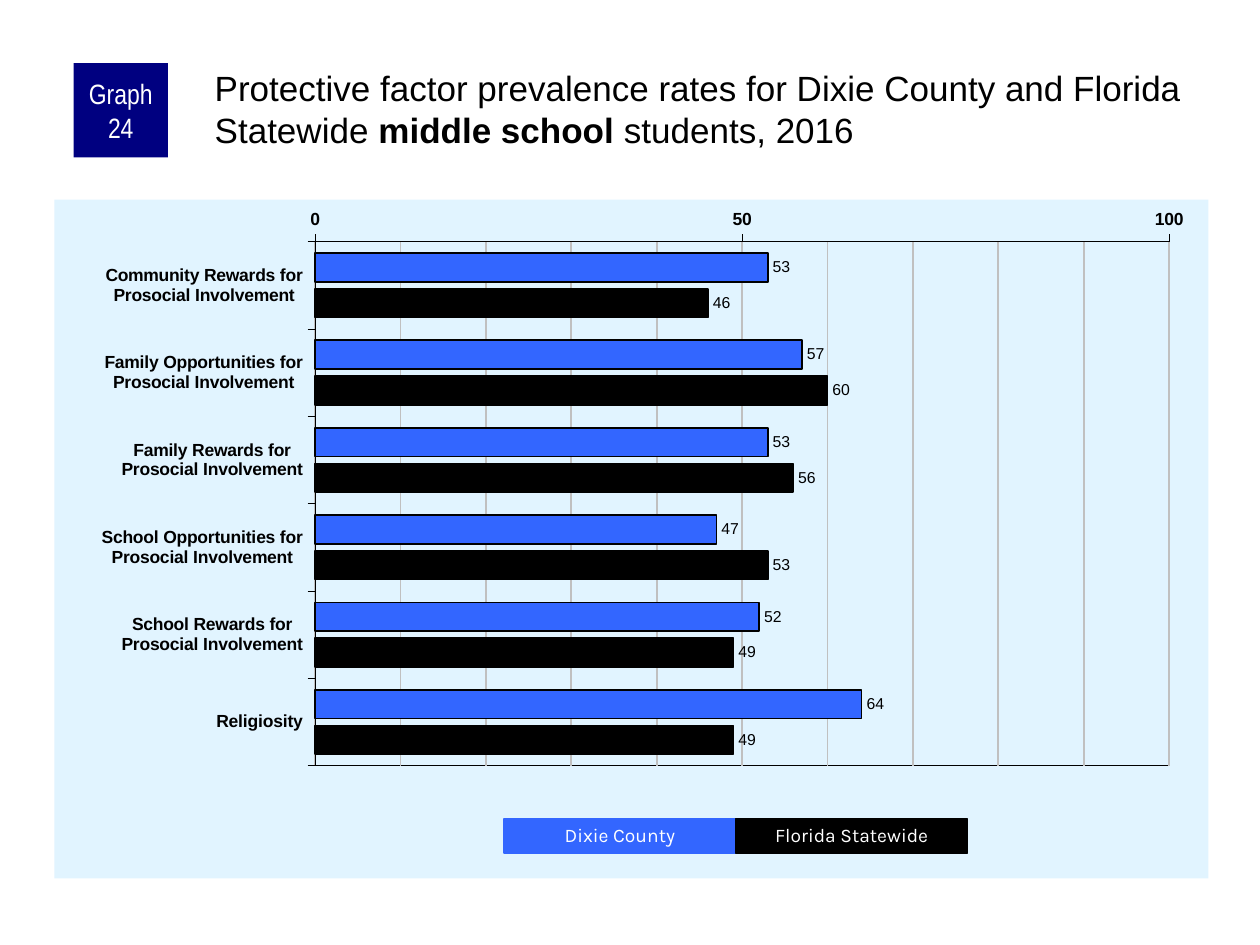
from copy import deepcopy

from lxml import etree
from pptx import Presentation
from pptx.chart.data import CategoryChartData
from pptx.dml.color import RGBColor
from pptx.enum.chart import XL_AXIS_CROSSES as Crosses
from pptx.enum.chart import XL_CHART_TYPE as ChartType
from pptx.enum.chart import XL_LABEL_POSITION as LabelPosition
from pptx.enum.chart import XL_TICK_MARK as TickMark
from pptx.enum.shapes import MSO_SHAPE as Preset
from pptx.enum.text import MSO_ANCHOR as Anchor
from pptx.enum.text import PP_ALIGN as Align
from pptx.oxml import parse_xml
from pptx.oxml.ns import qn
from pptx.util import Pt

COLORS = {
    "panel": "E1F4FF",
    "county": "3366FF",
    "state": "000000",
    "badge": "000080",
    "grid": "C0C0C0",
    "ink": "000000",
    "white": "FFFFFF",
}
CHART_NS = (
    'xmlns:c="http://schemas.openxmlformats.org/drawingml/2006/chart" '
    'xmlns:a="http://schemas.openxmlformats.org/drawingml/2006/main"'
)
CATEGORIES = [
    "Community Rewards for\nProsocial Involvement",
    "Family Opportunities for\nProsocial Involvement",
    "Family Rewards for\nProsocial Involvement",
    "School Opportunities for\nProsocial Involvement",
    "School Rewards for\nProsocial Involvement",
    "Religiosity",
]
GROUPS = [
    ("Dixie County", "county", (53, 57, 53, 47, 52, 64)),
    ("Florida Statewide", "state", (46, 60, 56, 53, 49, 49)),
]
PLOT_AREA = {"x": 0.226, "y": 0.062, "w": 0.74, "h": 0.772}


def color(name):
    return RGBColor.from_string(COLORS[name])


def style_font(font, size, name="Arial", tint="ink", bold=False):
    font.size = Pt(size)
    font.name = name
    font.bold = bold
    font.color.rgb = color(tint)


def style_line(line, tint, width):
    line.color.rgb = color(tint)
    line.width = Pt(width)


def write_text(shape, runs, *, size, font="Arial", tint="ink", align=Align.LEFT,
               anchor=Anchor.TOP, insets=(7.2, 3.6, 7.2, 3.6), spacing=None):
    """Fill a shape with one paragraph of (text, bold) runs."""
    frame = shape.text_frame
    frame.word_wrap = True
    frame.vertical_anchor = anchor
    (frame.margin_left, frame.margin_top,
     frame.margin_right, frame.margin_bottom) = map(Pt, insets)
    paragraph = frame.paragraphs[0]
    paragraph.alignment = align
    if spacing:
        paragraph.line_spacing = spacing
    for text, bold in runs:
        run = paragraph.add_run()
        run.text = text
        style_font(run.font, size, font, tint, bold)


def add_box(slide, box, fill, outline=None):
    shape = slide.shapes.add_shape(Preset.RECTANGLE, *map(Pt, box))
    shape.shadow.inherit = False
    shape.fill.solid()
    shape.fill.fore_color.rgb = color(fill)
    if outline:
        style_line(shape.line, outline, 0.75)
    else:
        shape.line.fill.background()
    return shape


def add_header(slide, left, top, width):
    badge = add_box(slide, (left, top, 54, 54), "badge")
    write_text(badge, [("Graph 24", False)], size=16, font="Arial Narrow", tint="white",
               align=Align.CENTER, anchor=Anchor.MIDDLE, insets=(3.6, 0, 3.6, 0))
    title = slide.shapes.add_textbox(Pt(left + 78.5), Pt(top), Pt(width - 78.5), Pt(60))
    runs = [
        ("Protective factor prevalence rates for Dixie County and Florida Statewide ", False),
        ("middle school ", True),
        ("students, 2016", False),
    ]
    write_text(title, runs, size=20, insets=(2.2, 2.2, 0, 0))


def style_axes(chart):
    for axis in (chart.category_axis, chart.value_axis):
        axis.major_tick_mark = TickMark.OUTSIDE
        axis.minor_tick_mark = TickMark.NONE
        style_font(axis.tick_labels.font, 10, bold=True)
        style_line(axis.format.line, "ink", 0.25)
    chart.category_axis.reverse_order = True
    chart.category_axis.crosses = Crosses.MAXIMUM
    value_axis = chart.value_axis
    value_axis.minimum_scale = 0
    value_axis.maximum_scale = 100
    value_axis.major_unit = 50
    value_axis.minor_unit = 10
    value_axis.has_major_gridlines = True
    value_axis.has_minor_gridlines = True
    style_line(value_axis.major_gridlines.format.line, "grid", 1)
    major, minor = (value_axis._element.find(qn(f"c:{level}Gridlines"))
                    for level in ("major", "minor"))
    minor.append(deepcopy(major.find(qn("c:spPr"))))


def style_areas(chart):
    """Fix the plot position, frame the plot and fill the chart background."""
    plot_area = chart.plots[0]._element.getparent()
    for old in plot_area.findall(qn("c:layout")):
        plot_area.remove(old)
    layout = parse_xml(f"<c:layout {CHART_NS}/>")
    manual = etree.SubElement(layout, qn("c:manualLayout"))
    settings = {"layoutTarget": "inner", "xMode": "edge", "yMode": "edge", **PLOT_AREA}
    for tag, value in settings.items():
        etree.SubElement(manual, qn(f"c:{tag}")).set("val", str(value))
    plot_area.insert(0, layout)
    plot_area.append(parse_xml(
        f'<c:spPr {CHART_NS}><a:noFill/><a:ln w="3175"><a:solidFill>'
        f'<a:srgbClr val="{COLORS["ink"]}"/></a:solidFill></a:ln></c:spPr>'))
    plot_area.getparent().addnext(parse_xml(
        f'<c:spPr {CHART_NS}><a:solidFill><a:srgbClr val="{COLORS["panel"]}"/>'
        f'</a:solidFill><a:ln><a:noFill/></a:ln></c:spPr>'))


def add_rates_chart(slide, box):
    data = CategoryChartData()
    data.categories = CATEGORIES
    for name, _, values in GROUPS:
        data.add_series(name, values)
    chart = slide.shapes.add_chart(ChartType.BAR_CLUSTERED, *map(Pt, box), data).chart
    chart.has_legend = False
    chart.has_title = False
    style_font(chart.font, 11.8)
    style_axes(chart)
    plot = chart.plots[0]
    plot.gap_width = 80
    plot.overlap = -25
    plot.vary_by_categories = False
    for series, (_, tint, _) in zip(plot.series, GROUPS):
        series.invert_if_negative = False
        series.format.fill.solid()
        series.format.fill.fore_color.rgb = color(tint)
        style_line(series.format.line, "ink", 1)
        labels = series.data_labels
        labels.show_value = True
        labels.position = LabelPosition.OUTSIDE_END
        style_font(labels.font, 9)
    style_areas(chart)


def add_key(slide, left, top, width, height):
    cell = width / len(GROUPS)
    for index, (name, tint, _) in enumerate(GROUPS):
        shape = add_box(slide, (left + index * cell, top, cell, height), tint, tint)
        write_text(shape, [(name, False)], size=11, font="Karla", tint="white",
                   align=Align.CENTER, anchor=Anchor.MIDDLE, spacing=0.9)


def main():
    presentation = Presentation()
    presentation.slide_width = Pt(720)
    presentation.slide_height = Pt(540)
    slide = presentation.slides.add_slide(presentation.slide_layouts[6])
    add_rates_chart(slide, (31, 114, 659.5, 388))
    add_header(slide, 42, 36, 648.5)
    add_key(slide, 288, 468, 265, 19.5)
    presentation.save("out.pptx")


if __name__ == "__main__":
    main()
